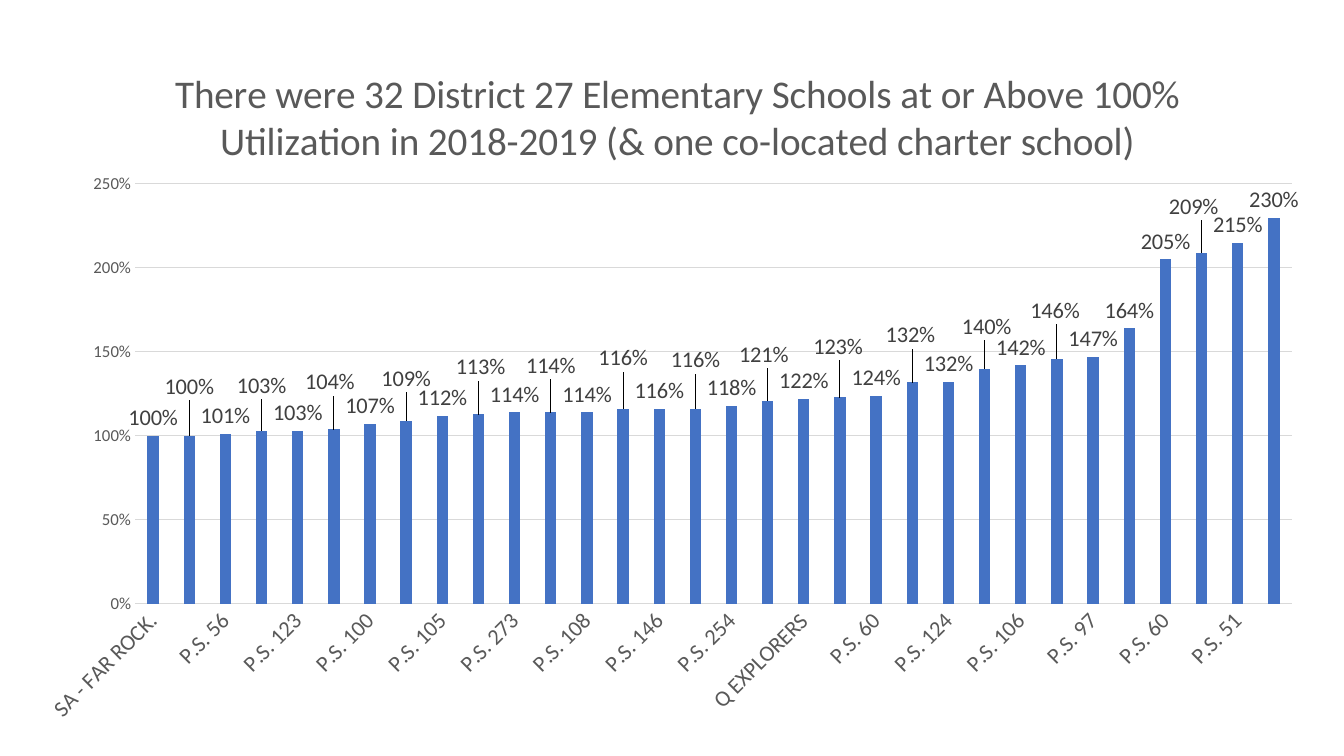
"""Build a slide with a column chart of elementary school utilization."""
from typing import NamedTuple, Optional

from lxml import etree
from pptx import Presentation
from pptx.chart.axis import CategoryAxis, ValueAxis
from pptx.chart.chart import Chart
from pptx.chart.data import CategoryChartData
from pptx.chart.series import BarSeries
from pptx.dml.color import RGBColor
from pptx.enum.chart import XL_CHART_TYPE, XL_LABEL_POSITION, XL_TICK_MARK
from pptx.oxml.ns import qn
from pptx.text.text import Font
from pptx.util import Emu, Pt

COLUMN_CLUSTERED = XL_CHART_TYPE.COLUMN_CLUSTERED
OUTSIDE_END = XL_LABEL_POSITION.OUTSIDE_END
NO_TICK = XL_TICK_MARK.NONE

EMU_PER_PX = 914400 / 100.8
FONT_NAME = "Calibri"
COLORS = {"column": "4472C4", "label": "404040", "text": "595959", "grid": "D9D9D9"}
TITLE = (
    "There were 32 District 27 Elementary Schools at or Above 100% "
    "Utilization in 2018-2019 (& one co-located charter school)"
)


class Box(NamedTuple):
    left: int
    top: int
    width: int
    height: int


class School(NamedTuple):
    name: str
    percent: int
    label_rise: int = 0
    label_shift: int = 0


SLIDE = Box(0, 0, 1344, 756)
CHART = Box(23, 35, 1295, 702)
PLOT = Box(135, 184, 1157, 420)
TITLE_BOX = Box(168, 60, 1004, 96)

SCHOOLS = [
    School("SA - FAR ROCK.", 100),
    School("P.S. 362", 100, 31),
    School("P.S. 56", 101),
    School("P.S. 43", 103, 27),
    School("P.S. 123", 103),
    School("P.S. 155", 104, 29, -4),
    School("P.S. 100", 107),
    School("P.S. 253", 109, 24),
    School("P.S. 105", 112),
    School("P.S. 114", 113, 29, 2),
    School("P.S. 273", 114),
    School("P.S. 63", 114, 29),
    School("P.S. 108", 114),
    School("P.S. 65", 116, 33),
    School("P.S. 146", 116),
    School("P.S. 90", 116, 31),
    School("P.S. 254", 118),
    School("P.S. 62", 121, 28, -4),
    School("Q EXPLORERS", 122),
    School("P.S. 232", 123, 33, -2),
    School("P.S. 60", 124),
    School("P.S. 64", 132, 29, -2),
    School("P.S. 124", 132),
    School("P.S. 47", 140, 24, 2),
    School("P.S. 106", 142),
    School("P.S. 317", 146, 30, -2),
    School("P.S. 97", 147),
    School("P.S. 306", 164),
    School("P.S. 60", 205),
    School("P.S. 96", 209, 28, -8),
    School("P.S. 51", 215),
    School("P.S. 66", 230),
]


def px(length: int) -> Emu:
    return Emu(round(length * EMU_PER_PX))


def color(name: str) -> RGBColor:
    return RGBColor.from_string(COLORS[name])


def style_font(font: Font, size: int, color_name: str) -> None:
    font.name = FONT_NAME
    font.size = Pt(size)
    font.bold = False
    font.color.rgb = color(color_name)


def place(parent: etree._Element, index: int, left: int, top: int,
          size: Optional[Box] = None, edge: bool = True) -> None:
    """Give a chart part a manual layout, as fractions of the chart."""
    for previous in parent.findall(qn("c:layout")):
        parent.remove(previous)
    layout = etree.Element(qn("c:layout"))
    parent.insert(index, layout)
    manual = etree.SubElement(layout, qn("c:manualLayout"))
    settings: list[tuple[str, object]] = []
    if size:
        settings.append(("layoutTarget", "inner"))
    if edge:
        settings += [("xMode", "edge"), ("yMode", "edge")]
    settings += [("x", left / CHART.width), ("y", top / CHART.height)]
    if size:
        settings += [("w", size.width / CHART.width), ("h", size.height / CHART.height)]
    for tag, value in settings:
        etree.SubElement(manual, qn(f"c:{tag}")).set("val", str(value))


def style_title(chart: Chart) -> None:
    chart.has_title = True
    run = chart.chart_title.text_frame.paragraphs[0].add_run()
    run.text = TITLE
    style_font(run.font, 28, "text")
    place(chart.chart_title._element, 1, TITLE_BOX.left - CHART.left, TITLE_BOX.top - CHART.top)


def style_category_axis(axis: CategoryAxis) -> None:
    axis.major_tick_mark = axis.minor_tick_mark = NO_TICK
    style_font(axis.tick_labels.font, 16, "text")
    axis.format.line.color.rgb = color("grid")
    axis.format.line.width = Pt(0.75)
    axis._element.find(qn("c:txPr")).find(qn("a:bodyPr")).set("rot", "-2700000")
    skip = etree.Element(qn("c:tickLblSkip"), val="2")
    axis._element.find(qn("c:noMultiLvlLbl")).addprevious(skip)


def style_value_axis(axis: ValueAxis) -> None:
    axis.minimum_scale, axis.maximum_scale, axis.major_unit = 0, 2.5, 0.5
    axis.major_tick_mark = axis.minor_tick_mark = NO_TICK
    style_font(axis.tick_labels.font, 12, "text")
    axis.tick_labels.number_format = "0%"
    axis.tick_labels.number_format_is_linked = False
    axis.format.line.fill.background()
    axis.major_gridlines.format.line.color.rgb = color("grid")
    axis.major_gridlines.format.line.width = Pt(0.75)


def style_series(series: BarSeries) -> None:
    series.format.fill.solid()
    series.format.fill.fore_color.rgb = color("column")
    labels = series.data_labels
    labels.show_value = True
    labels.position = OUTSIDE_END
    labels.number_format = "0%"
    labels.number_format_is_linked = False
    style_font(labels.font, 16, "label")
    for index, school in enumerate(SCHOOLS):
        if school.label_rise:
            label = series.points[index].data_label
            label.position = OUTSIDE_END
            style_font(label.font, 16, "label")
            place(label._get_or_add_dLbl(), 1, school.label_shift, -school.label_rise, edge=False)


def main() -> None:
    presentation = Presentation()
    presentation.slide_width, presentation.slide_height = px(SLIDE.width), px(SLIDE.height)
    slide = presentation.slides.add_slide(presentation.slide_layouts[6])
    data = CategoryChartData(number_format="0%")
    data.categories = [school.name for school in SCHOOLS]
    data.add_series("Series 1", [school.percent / 100 for school in SCHOOLS])
    frame = slide.shapes.add_chart(COLUMN_CLUSTERED, *map(px, CHART), data)
    chart = frame.chart
    chart.has_legend = False
    style_font(chart.font, 10, "text")
    style_title(chart)
    style_category_axis(chart.category_axis)
    style_value_axis(chart.value_axis)
    plot = chart.plots[0]
    plot.gap_width, plot.overlap, plot.vary_by_categories = 219, -27, False
    style_series(plot.series[0])
    plot_area = chart._chartSpace.chart.plotArea
    place(plot_area, 0, PLOT.left - CHART.left, PLOT.top - CHART.top, PLOT)
    presentation.save("out.pptx")


if __name__ == "__main__":
    main()
